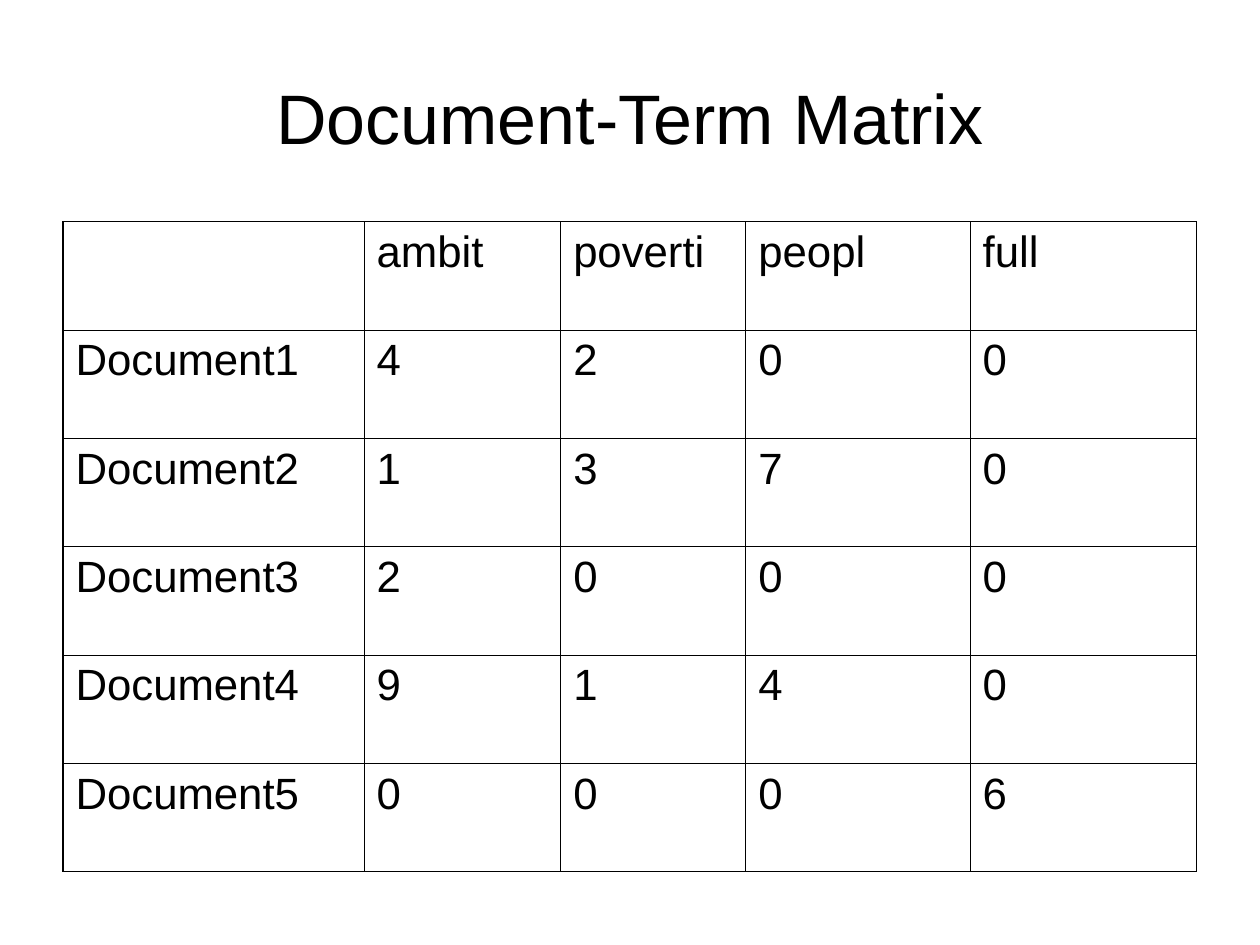
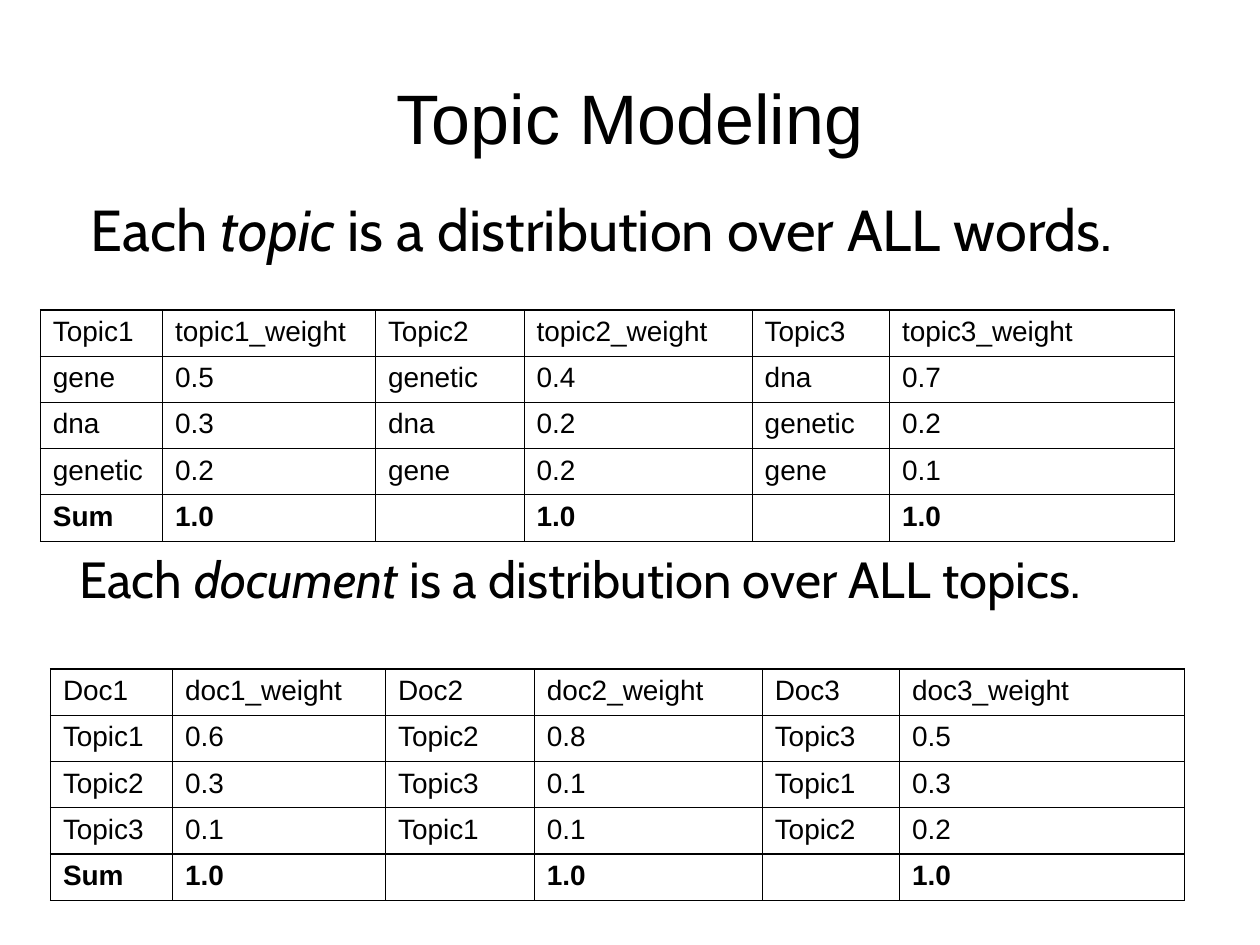
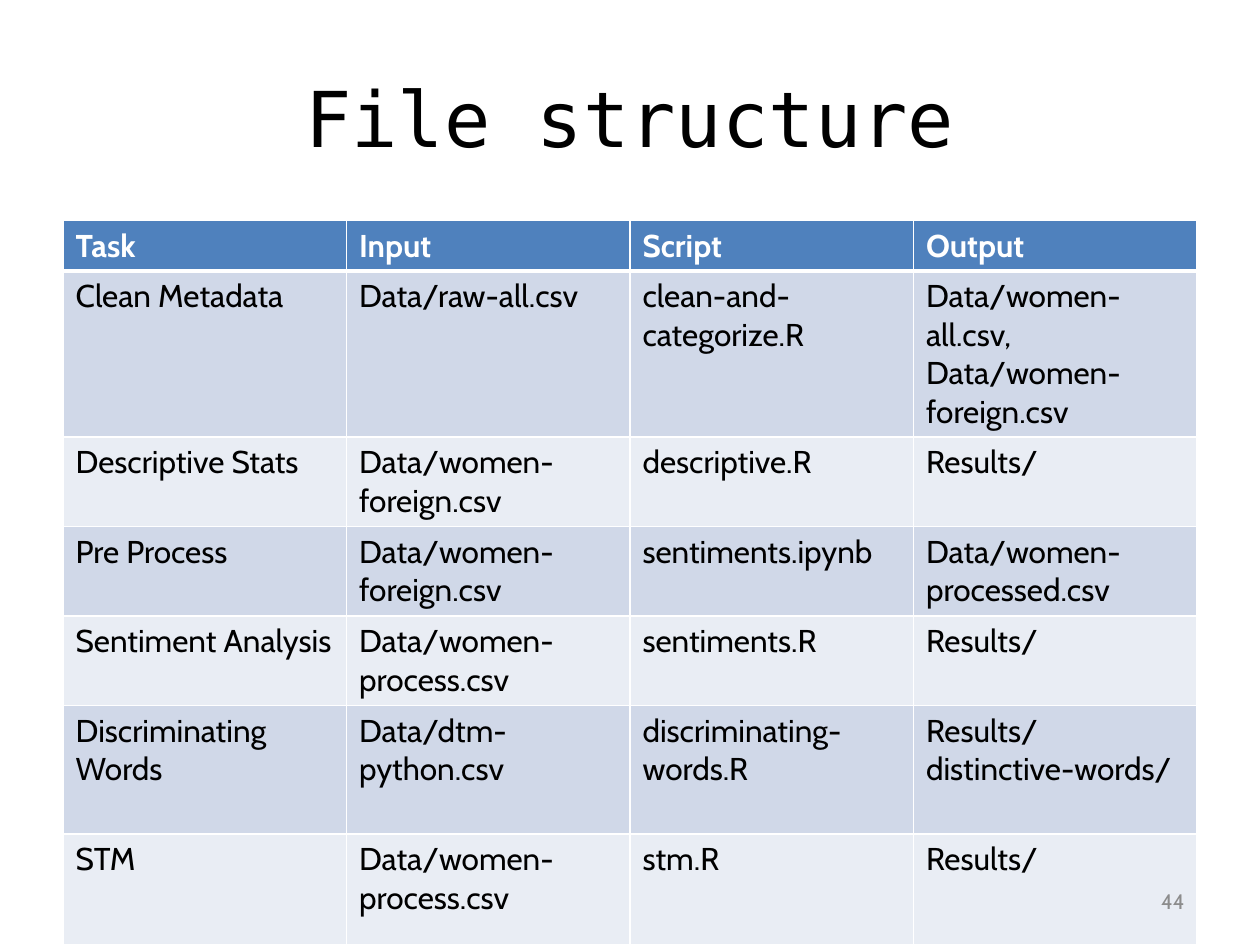
"""Build three slides on document-term matrices, topic models and file structure."""
from dataclasses import dataclass

from lxml.etree import SubElement
from pptx import Presentation
from pptx.dml.color import RGBColor as Color
from pptx.enum.text import MSO_ANCHOR as Anchor, PP_ALIGN as Align
from pptx.oxml.ns import qn
from pptx.util import Emu, Pt

PX = 9144


@dataclass(frozen=True)
class Theme:
    """Hold the colours, fonts and type sizes that the slides share."""
    black: str = "000000"
    white: str = "FFFFFF"
    grey: str = "8C8C8C"
    header: str = "4F81BD"
    bands: tuple = ("D0D8E8", "E9EDF4")
    sans: str = "Arial"
    body: str = "Cabin"
    mono: str = "DejaVu Sans Mono"
    title_size: int = 40
    mono_title_size: int = 44
    matrix_size: int = 25
    weight_size: int = 16
    file_size: int = 18
    number_size: int = 12
    grid_line: float = 0.75
    file_line: float = 1
    header_line: float = 3


THEME = Theme()
TITLE_BOX = (50, 30, 900, 125)

MATRIX_COLUMNS = (239, 156, 147, 178, 180)
MATRIX = [
    ("", "ambit", "poverti", "peopl", "full"),
    ("Document1", "4", "2", "0", "0"),
    ("Document2", "1", "3", "7", "0"),
    ("Document3", "2", "0", "0", "0"),
    ("Document4", "9", "1", "4", "0"),
    ("Document5", "0", "0", "0", "6"),
]

WEIGHT_COLUMNS = (97, 169, 118, 181, 109, 226)
SUM_ROW = ("Sum", "1.0", "", "1.0", "", "1.0")
TOPIC_WEIGHTS = [
    ("Topic1", "topic1_weight", "Topic2", "topic2_weight", "Topic3", "topic3_weight"),
    ("gene", "0.5", "genetic", "0.4", "dna", "0.7"),
    ("dna", "0.3", "dna", "0.2", "genetic", "0.2"),
    ("genetic", "0.2", "gene", "0.2", "gene", "0.1"),
    SUM_ROW,
]
DOCUMENT_WEIGHTS = [
    ("Doc1", "doc1_weight", "Doc2", "doc2_weight", "Doc3", "doc3_weight"),
    ("Topic1", "0.6", "Topic2", "0.8", "Topic3", "0.5"),
    ("Topic2", "0.3", "Topic3", "0.1", "Topic1", "0.3"),
    ("Topic3", "0.1", "Topic1", "0.1", "Topic2", "0.2"),
    SUM_ROW,
]

FILE_COLUMNS = (225,) * 4
FILE_ROWS = (40, 132, 71, 71, 71, 102, 88)
FILES = [
    ("Task", "Input", "Script", "Output"),
    ("Clean Metadata", "Data/raw-all.csv", "clean-and-categorize.R",
     "Data/women-all.csv, Data/women-foreign.csv"),
    ("Descriptive Stats", "Data/women-foreign.csv", "descriptive.R", "Results/"),
    ("Pre Process", "Data/women-foreign.csv", "sentiments.ipynb",
     "Data/women-processed.csv"),
    ("Sentiment Analysis", "Data/women-process.csv", "sentiments.R", "Results/"),
    ("Discriminating Words", "Data/dtm-python.csv", "discriminating-words.R",
     "Results/distinctive-words/"),
    ("STM", "Data/women-process.csv", "stm.R", "Results/"),
]


def px(*lengths):
    """Turn px lengths into EMU."""
    return [Emu(length * PX) for length in lengths]


def set_all(target, values):
    """Set each attribute named in a dict of format values."""
    for name, value in values.items():
        setattr(target, name, value)


def add_run(paragraph, text, font, size, color=THEME.black, **values):
    """Add one formatted run to a paragraph."""
    run = paragraph.add_run()
    run.text = text
    set_all(run.font, {"name": font, "size": Pt(size), **values})
    run.font.color.rgb = Color.from_string(color)


def add_text(slide, box, align=Align.LEFT, anchor=Anchor.TOP, insets=(9, 4)):
    """Add a wrapping text box and return its paragraph."""
    frame = slide.shapes.add_textbox(*px(*box)).text_frame
    side, end = px(*insets)
    set_all(frame, {"word_wrap": True, "vertical_anchor": anchor,
                    "margin_left": side, "margin_right": side,
                    "margin_top": end, "margin_bottom": end})
    paragraph = frame.paragraphs[0]
    paragraph.alignment = align
    return paragraph


def add_title(slide, text, font=THEME.sans, size=THEME.title_size):
    """Add the centred slide title."""
    paragraph = add_text(slide, TITLE_BOX, Align.CENTER, Anchor.MIDDLE, (0, 0))
    add_run(paragraph, text, font, size)


def add_statement(slide, box, subject, rest, size):
    """Add a sentence whose subject is in italics."""
    paragraph = add_text(slide, box)
    for text, italic in (("Each ", False), (f"{subject} ", True), (rest, False)):
        add_run(paragraph, text, THEME.body, size, italic=italic)


def set_borders(cell, color, widths):
    """Draw the left, right, top and bottom borders of a cell."""
    properties = cell._tc.get_or_add_tcPr()
    for side, width in zip("LRTB", widths):
        line = SubElement(properties, qn(f"a:ln{side}"), w=str(Pt(width)))
        fill = SubElement(line, qn("a:solidFill"))
        SubElement(fill, qn("a:srgbClr"), val=color)


def fill_cell(cell, text, font, size, color=THEME.black, bold=False):
    """Write a cell, keeping the type size where it is empty."""
    paragraph = cell.text_frame.paragraphs[0]
    if text:
        add_run(paragraph, text, font, size, color, bold=bold)
    else:
        SubElement(paragraph._p, qn("a:endParaRPr"), sz=str(size * 100))


def add_plain_table(slide, left, top, columns, heights, rows):
    """Add an unstyled table and yield its cells with row number and text."""
    box = px(left, top, sum(columns), sum(heights))
    table = slide.shapes.add_table(len(rows), len(columns), *box).table
    set_all(table, {"first_row": False, "horz_banding": False})
    for column, width in zip(table.columns, px(*columns)):
        column.width = width
    for row, height in zip(table.rows, px(*heights)):
        row.height = height
    for index, (row, texts) in enumerate(zip(table.rows, rows)):
        for cell, text in zip(row.cells, texts):
            yield index, cell, text


def add_grid_table(slide, left, top, columns, height, rows, size):
    """Add a black-ruled table whose sum row is bold."""
    heights = (height,) * len(rows)
    for index, cell, text in add_plain_table(slide, left, top, columns, heights, rows):
        set_borders(cell, THEME.black, (THEME.grid_line,) * 4)
        cell.fill.background()
        fill_cell(cell, text, THEME.sans, size, bold=rows[index] is SUM_ROW)


def add_banded_table(slide, left, top, columns, heights, rows):
    """Add a table with a coloured header and alternating bands."""
    thin, thick = THEME.file_line, THEME.header_line
    for index, cell, text in add_plain_table(slide, left, top, columns, heights, rows):
        header = index == 0
        widths = (thin, thin, thick if index == 1 else thin, thick if header else thin)
        set_borders(cell, THEME.white, widths)
        cell.fill.solid()
        background = THEME.header if header else THEME.bands[(index - 1) % 2]
        cell.fill.fore_color.rgb = Color.from_string(background)
        color = THEME.white if header else THEME.black
        fill_cell(cell, text, THEME.body, THEME.file_size, color, header)


def add_slide_number(slide, number):
    """Add the slide number at the bottom right."""
    paragraph = add_text(slide, (717, 695, 233, 40), Align.RIGHT, Anchor.MIDDLE, (10, 5))
    add_run(paragraph, number, THEME.body, THEME.number_size, THEME.grey)


def build_matrix_slide(slide):
    """Show the document-term matrix."""
    add_title(slide, "Document-Term Matrix")
    add_grid_table(slide, 50, 176, MATRIX_COLUMNS, 86, MATRIX, THEME.matrix_size)


def build_topic_slide(slide):
    """Show topics over words and documents over topics."""
    add_title(slide, "Topic Modeling")
    for left, top, rows in ((40, 531, DOCUMENT_WEIGHTS), (32, 246, TOPIC_WEIGHTS)):
        add_grid_table(slide, left, top, WEIGHT_COLUMNS, 36, rows, THEME.weight_size)
    add_statement(slide, (63, 150, 898, 60), "topic",
                  "is a distribution over ALL words.", 33)
    add_statement(slide, (54, 431, 898, 54), "document",
                  "is a distribution over ALL topics.", 29)


def build_file_slide(slide):
    """Show the input, script and output of each task."""
    add_title(slide, "File structure", THEME.mono, THEME.mono_title_size)
    add_banded_table(slide, 50, 175, FILE_COLUMNS, FILE_ROWS, FILES)
    add_slide_number(slide, "44")


def main():
    """Build and save the presentation."""
    presentation = Presentation()
    width, height = px(1000, 750)
    set_all(presentation, {"slide_width": width, "slide_height": height})
    blank = presentation.slide_layouts[6]
    for build in (build_matrix_slide, build_topic_slide, build_file_slide):
        build(presentation.slides.add_slide(blank))
    presentation.save("out.pptx")


if __name__ == "__main__":
    main()
